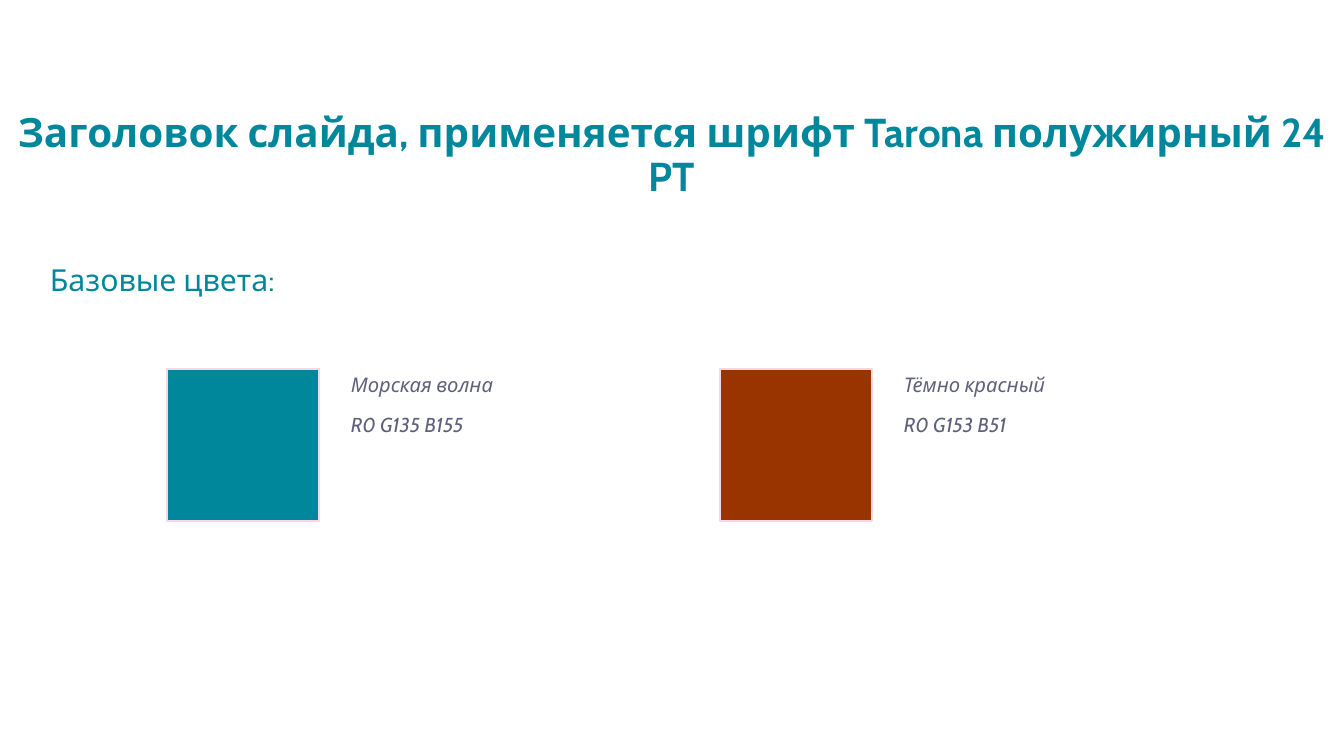
from pptx import Presentation
from pptx.dml.color import RGBColor
from pptx.enum.shapes import MSO_SHAPE
from pptx.enum.text import MSO_ANCHOR, MSO_AUTO_SIZE, PP_ALIGN
from pptx.util import Inches, Pt

PX_PER_INCH = 121
COLORS = {"teal": "00879B", "dark_red": "993300", "outline": "FAD5E5", "label": "60607D"}


def px(length):
    return Inches(length / PX_PER_INCH)


def color(name):
    return RGBColor.from_string(COLORS[name])


class GuidePage:
    font_name = "Cabin"

    def __init__(self, deck):
        self.page = deck.slides.add_slide(deck.slide_layouts[5])

    def place(self, shape, left, top, width, height):
        shape.left, shape.top = px(left), px(top)
        shape.width, shape.height = px(width), px(height)

    def fill_text(self, frame, lines, size, ink, bold=False, italic=False, align=PP_ALIGN.LEFT):
        frame.word_wrap = True
        frame.auto_size = MSO_AUTO_SIZE.NONE
        for index, line in enumerate(lines):
            para = frame.paragraphs[0] if index == 0 else frame.add_paragraph()
            para.text = line
            para.alignment = align
            para.line_spacing = 0.9
            para.space_before = Pt(11.1 if index else 0)
            font = para.font
            font.name, font.size = self.font_name, Pt(size)
            font.bold, font.italic = bold, italic
            font.color.rgb = color(ink)

    def title(self, text, left, top, width, height):
        box = self.page.shapes.title
        self.place(box, left, top, width, height)
        frame = box.text_frame
        frame.vertical_anchor = MSO_ANCHOR.MIDDLE
        frame.margin_left = frame.margin_right = px(6)
        frame.margin_top = frame.margin_bottom = px(6)
        self.fill_text(frame, [text], 24, "teal", bold=True, align=PP_ALIGN.CENTER)

    def text(self, lines, left, top, width, height, size, ink, italic=False):
        box = self.page.shapes.add_textbox(px(left), px(top), px(width), px(height))
        self.fill_text(box.text_frame, lines, size, ink, italic=italic)

    def swatch(self, fill, left, top, side):
        box = self.page.shapes.add_shape(
            MSO_SHAPE.RECTANGLE, px(left), px(top), px(side), px(side))
        box.shadow.inherit = False
        box.fill.solid()
        box.fill.fore_color.rgb = color(fill)
        box.line.color.rgb = color("outline")
        box.line.width = Pt(0.75)


def main():
    deck = Presentation()
    deck.slide_width, deck.slide_height = px(1344), px(756)
    guide = GuidePage(deck)
    guide.title("Заголовок слайда, применяется шрифт Tarona полужирный 24 PT", 0, 121, 1344, 71)
    guide.text(["Базовые цвета:"], 38, 259, 1270, 59, 18, "teal")

    base_colors = [
        ("teal", ["Морская волна", "R0 G135 B155"]),
        ("dark_red", ["Тёмно красный", "R0 G153 B51"]),
    ]
    first_left, column_step, top, side, label_offset = 167, 553, 369, 152, 172
    for column, (fill, lines) in enumerate(base_colors):
        left = first_left + column * column_step
        guide.swatch(fill, left, top, side)
        guide.text(lines, left + label_offset, top, 334, side, 12, "label", italic=True)

    deck.save("out.pptx")


if __name__ == "__main__":
    main()
